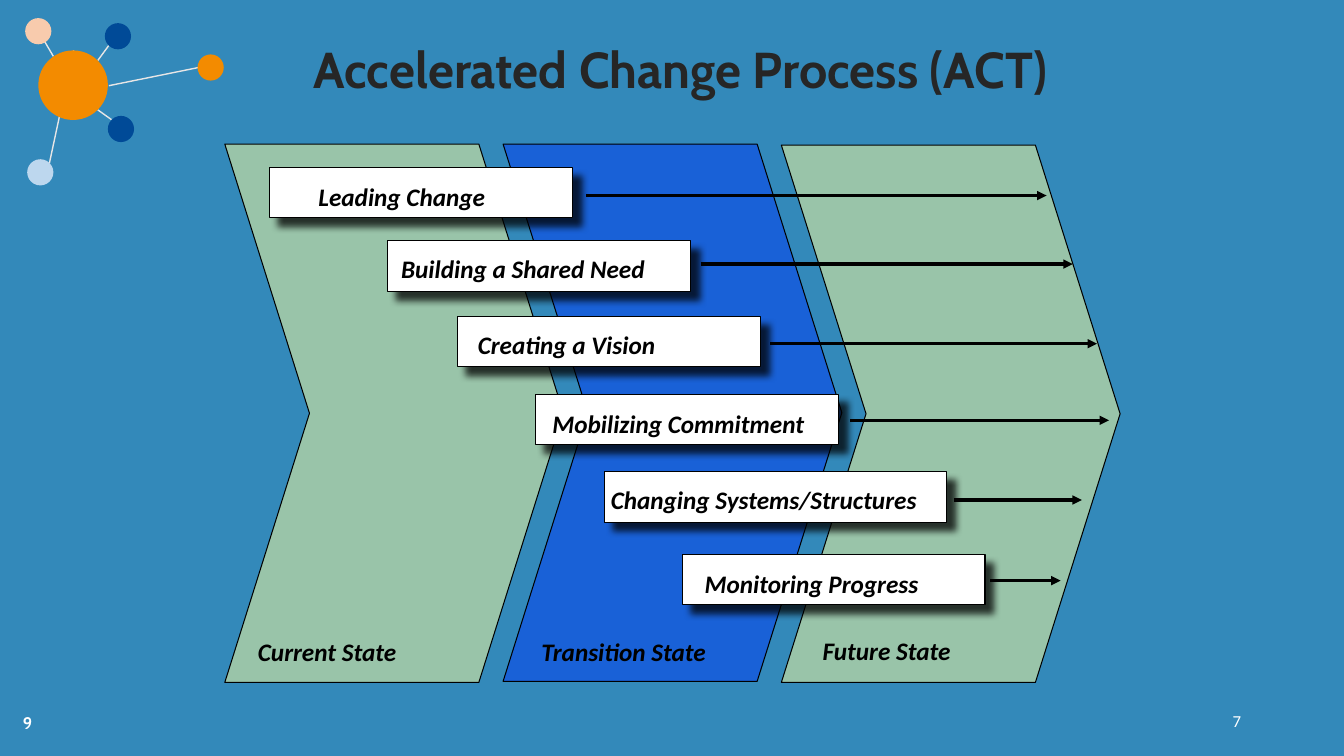
from typing import NamedTuple

from lxml.etree import SubElement
from pptx import Presentation
from pptx.dml.color import RGBColor
from pptx.enum.shapes import MSO_CONNECTOR, MSO_SHAPE
from pptx.enum.text import MSO_ANCHOR, MSO_AUTO_SIZE, PP_ALIGN
from pptx.oxml.ns import qn
from pptx.util import Emu, Pt

SCALE = 9144  # EMU in one px, 100 px to the inch
BLACK, WHITE = "000000", "FFFFFF"
LABEL = {"name": "Calibri", "size": Pt(18), "bold": True, "italic": True}


class Node(NamedTuple):
    left: int
    top: int
    size: int
    fill: str


class Link(NamedTuple):
    x1: int
    y1: int
    x2: int
    y2: int


class State(NamedTuple):
    name: str
    left: int
    top: int
    high: int
    fill: str
    text_x: int
    text_y: int


class Step(NamedTuple):
    name: str
    left: int
    top: int
    wide: int
    text_x: int
    text_y: int
    text_w: int
    arrow: Link


LINKS = [
    Link(43, 39, 53, 56), Link(97, 109, 111, 119), Link(108, 45, 97, 60),
    Link(197, 67, 108, 85), Link(49, 162, 73, 50),
]
NODES = [
    Node(196, 54, 26, "F38B00"), Node(104, 23, 26, "004A97"),
    Node(107, 115, 26, "004A97"), Node(25, 18, 26, "F8CBAD"),
    Node(38, 50, 69, "F38B00"), Node(27, 158, 26, "BDD7EE"),
]
STATES = [
    State("Current State", 223, 143, 534, "FFFF99", 246, 626),
    State("Transition State", 499, 143, 533, "003AF4", 527, 626),
    State("Future State", 775, 144, 533, "FFFF99", 806, 625),
]
STEPS = [
    Step("Leading Change", 267, 166, 301, 306, 175, 222, Link(581, 194, 1038, 194)),
    Step("Building a Shared Need", 384, 239, 301, 388, 246, 289, Link(695, 262, 1064, 262)),
    Step("Creating a Vision", 454, 314, 300, 464, 322, 289, Link(764, 341, 1088, 341)),
    Step("Mobilizing Commitment", 531, 391, 301, 538, 400, 289, Link(843, 417, 1100, 417)),
    Step("Changing Systems/Structures", 600, 468, 339, 596, 476, 353, Link(946, 496, 1073, 496)),
    Step("Monitoring Progress", 677, 550, 300, 689, 559, 289, Link(982, 576, 1052, 576)),
]


def px(*vals: int) -> list[Emu]:
    return [Emu(val * SCALE) for val in vals]


def tint(code: str) -> RGBColor:
    return RGBColor.from_string(code)


def draw_shape(kind: MSO_SHAPE, box: tuple, fill: str, edge: str = ""):
    shape = slide.shapes.add_shape(kind, *px(*box))
    shape.shadow.inherit = False
    shape.fill.solid()
    shape.fill.fore_color.rgb = tint(fill)
    if edge:
        shape.line.color.rgb = tint(edge)
        shape.line.width = Pt(0.75)
    else:
        shape.line.fill.background()
    return shape


def draw_line(link: Link, code: str, width: float, arrow: bool = False) -> None:
    line = slide.shapes.add_connector(MSO_CONNECTOR.STRAIGHT, *px(*link))
    line.line.color.rgb = tint(code)
    line.line.width = Pt(width)
    if arrow:
        SubElement(line.line._get_or_add_ln(), qn("a:tailEnd"), type="triangle")
    SubElement(line._element.spPr, qn("a:effectLst"))


def draw_text(text: str, box: tuple, font: dict, code: str = BLACK,
              align: PP_ALIGN = PP_ALIGN.LEFT, anchor: MSO_ANCHOR = MSO_ANCHOR.TOP,
              grow: bool = False):
    frame = slide.shapes.add_textbox(*px(*box)).text_frame
    frame.word_wrap = True
    frame.vertical_anchor = anchor
    frame.auto_size = MSO_AUTO_SIZE.SHAPE_TO_FIT_TEXT if grow else MSO_AUTO_SIZE.NONE
    para = frame.paragraphs[0]
    para.alignment = align
    run = para.add_run()
    run.text = text
    for key, val in font.items():
        setattr(run.font, key, val)
    run.font.color.rgb = tint(code)
    return para


def set_alpha(parent, share: int) -> None:
    SubElement(parent, qn("a:alpha"), val=str(share * 1000))


def cast_shadow(shape) -> None:
    effects = shape._element.spPr.find(qn("a:effectLst"))
    outer = SubElement(effects, qn("a:outerShdw"), blurRad=str(Pt(5)),
                       dist=str(Pt(8.5)), dir="2700000", algn="tl", rotWithShape="0")
    set_alpha(SubElement(outer, qn("a:srgbClr"), val=BLACK), 75)


deck = Presentation()
deck.slide_width, deck.slide_height = px(1333, 750)
slide = deck.slides.add_slide(deck.slide_layouts[6])
slide.background.fill.solid()
slide.background.fill.fore_color.rgb = tint("3389BA")

# Network ornament
for link in LINKS:
    draw_line(link, "E7E6E6", 1)
for node in NODES:
    draw_shape(MSO_SHAPE.OVAL, (node.left, node.top, node.size, node.size), node.fill)

# Title
title = draw_text("Accelerated Change Process (ACT)", (205, 56, 940, 48),
                  {"name": "Cabin", "size": Pt(36), "bold": True}, "262626",
                  PP_ALIGN.CENTER, MSO_ANCHOR.BOTTOM)
title.line_spacing = 0.9

# Three states
for state in STATES:
    shape = draw_shape(MSO_SHAPE.CHEVRON, (state.left, state.top, 336, state.high),
                       state.fill, BLACK)
    shape.adjustments[0] = 0.25
    set_alpha(shape._element.spPr.find(qn("a:solidFill"))[0], 50)
for state in STATES:
    draw_text(state.name, (state.text_x, state.text_y, 222, 40), LABEL, grow=True)

# Six steps, each with its arrow
for step in STEPS:
    cast_shadow(draw_shape(MSO_SHAPE.RECTANGLE, (step.left, step.top, step.wide, 50),
                           WHITE, BLACK))
for step in STEPS:
    draw_line(step.arrow, BLACK, 2.25, arrow=True)
    draw_text(step.name, (step.text_x, step.text_y, step.text_w, 40), LABEL, grow=True)

# Page numbers
draw_text("9", (9, 697, 33, 40), {"name": "Cabin", "size": Pt(12), "bold": True},
          WHITE, PP_ALIGN.RIGHT, MSO_ANCHOR.MIDDLE)
draw_text("7", (941, 695, 300, 40), {"name": "Calibri", "size": Pt(12)},
          WHITE, PP_ALIGN.RIGHT, MSO_ANCHOR.MIDDLE)

deck.save("out.pptx")
